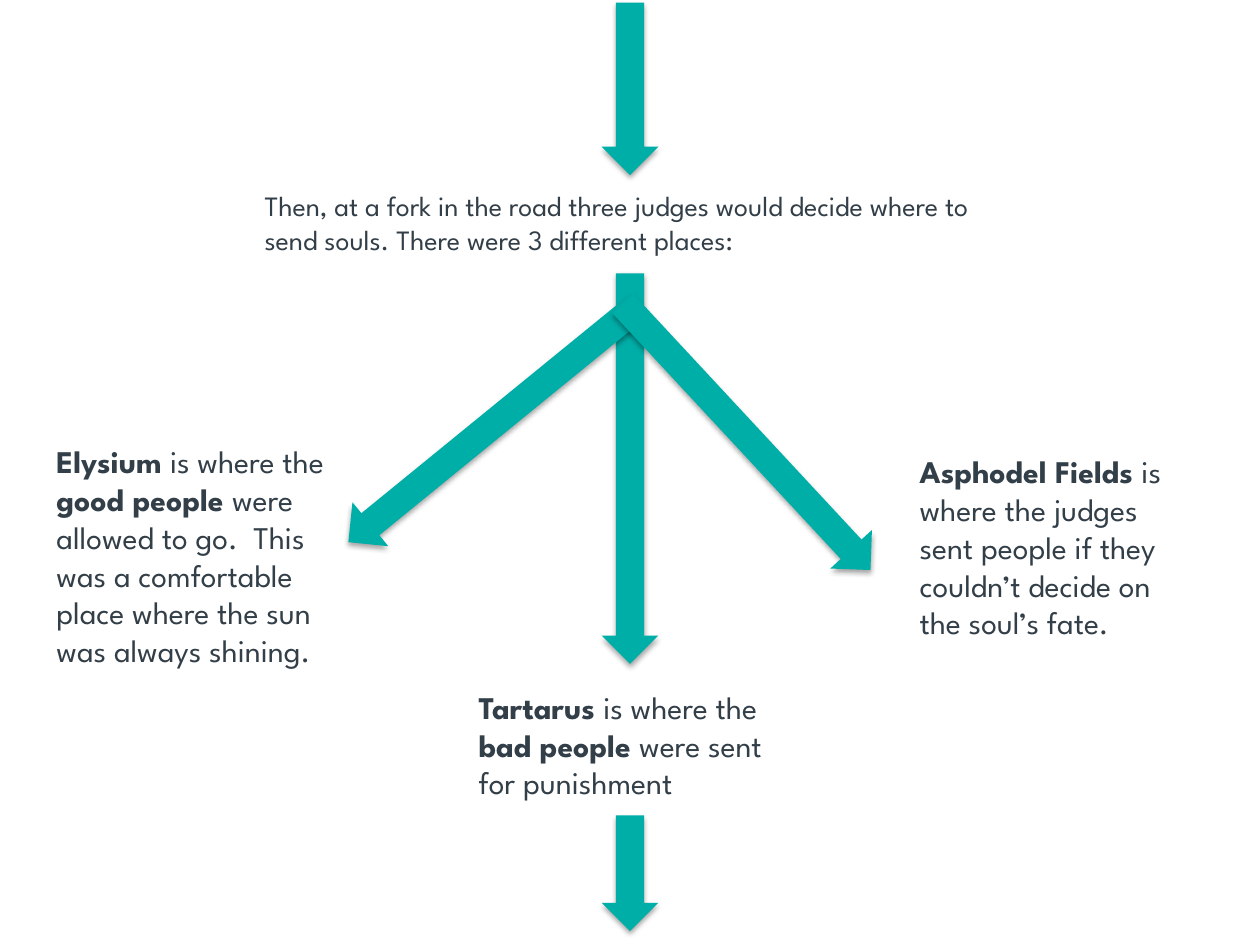
"""Build a slide showing where the judges of the underworld send souls."""
from dataclasses import dataclass

import pptx
import pptx.dml.color
import pptx.enum.shapes
import pptx.enum.text
import pptx.oxml
import pptx.oxml.ns
import pptx.util
from lxml import etree

Pt = pptx.util.Pt


@dataclass(frozen=True)
class Theme:
    font: str = "League Spartan"
    ink: str = "333F48"
    arrow: str = "00AEA8"
    shadow: str = "000000"
    intro_size: int = 16
    body_size: int = 18
    arrow_width: float = 32.4


THEME = Theme()
CENTER = 360

BRANCHES = [
    ((266.4, 389.5, 198, 94.3), (CENTER, 267.8, 223.2, 0),
     [("Tartarus ", True), ("is where the ", False), ("bad people ", True),
      ("were sent for punishment", False)]),
    ((25.2, 249.1, 170.6, 181.4), (281.9, 242.3, 213.8, 50.8),
     [("Elysium ", True), ("is where the ", False), ("good people ", True),
      ("were allowed to go.  This was a comfortable place where the sun "
       "was always shining.", False)]),
    ((518.4, 254.9, 164.2, 181.4), (426.6, 249.5, 208.1, -42.9),
     [("Asphodel Fields ", True),
      ("is where the judges sent people if they couldn’t decide on the "
       "soul’s fate.", False)]),
]


def rgb(value):
    return pptx.dml.color.RGBColor.from_string(value)


def add_text(s, box, runs, size, inset=None):
    sp = s.shapes.add_textbox(*map(Pt, box))
    tf = sp.text_frame
    tf.word_wrap = True
    tf.auto_size = pptx.enum.text.MSO_AUTO_SIZE.SHAPE_TO_FIT_TEXT
    if inset is not None:
        tf.margin_left = tf.margin_right = Pt(inset)
        tf.margin_top = tf.margin_bottom = Pt(inset)
    p = tf.paragraphs[0]
    p.font.name = THEME.font
    p.font.size = Pt(size)
    p.font.color.rgb = rgb(THEME.ink)
    for text, bold in runs:
        r = p.add_run()
        r.text = text
        r.font.bold = bold


def add_shadow(sp):
    sp.shadow.inherit = False
    qn = pptx.oxml.ns.qn
    effects = sp.element.spPr.find(qn("a:effectLst"))
    outer = etree.SubElement(
        effects, qn("a:outerShdw"), blurRad=str(Pt(3.1)), dist=str(Pt(1.8)),
        dir="5400000", rotWithShape="0")
    color = etree.SubElement(outer, qn("a:srgbClr"), val=THEME.shadow)
    etree.SubElement(color, qn("a:alpha"), val="35000")


def add_arrow(s, cx, cy, length, angle=0):
    w = THEME.arrow_width
    sp = s.shapes.add_shape(
        pptx.enum.shapes.MSO_SHAPE.DOWN_ARROW,
        Pt(cx - w / 2), Pt(cy - length / 2), Pt(w), Pt(length))
    sp.rotation = angle
    sp.fill.solid()
    sp.fill.fore_color.rgb = rgb(THEME.arrow)
    sp.line.fill.background()
    add_shadow(sp)


def main():
    prs = pptx.Presentation()
    prs.slide_width, prs.slide_height = Pt(720), Pt(540)
    s = prs.slides.add_slide(prs.slide_layouts[6])
    intro = ("Then, at a fork in the road three judges would decide where to "
             "send souls. There were 3 different places:")
    add_text(s, (151.2, 108, 417.6, 38.9), [(intro, False)],
             THEME.intro_size, inset=0)
    for box, arrow, runs in BRANCHES:
        add_text(s, box, runs, THEME.body_size)
        add_arrow(s, *arrow)
    for cy, length in ((50.8, 98.6), (499, 66.2)):
        add_arrow(s, CENTER, cy, length)
    prs.save("out.pptx")


if __name__ == "__main__":
    main()
